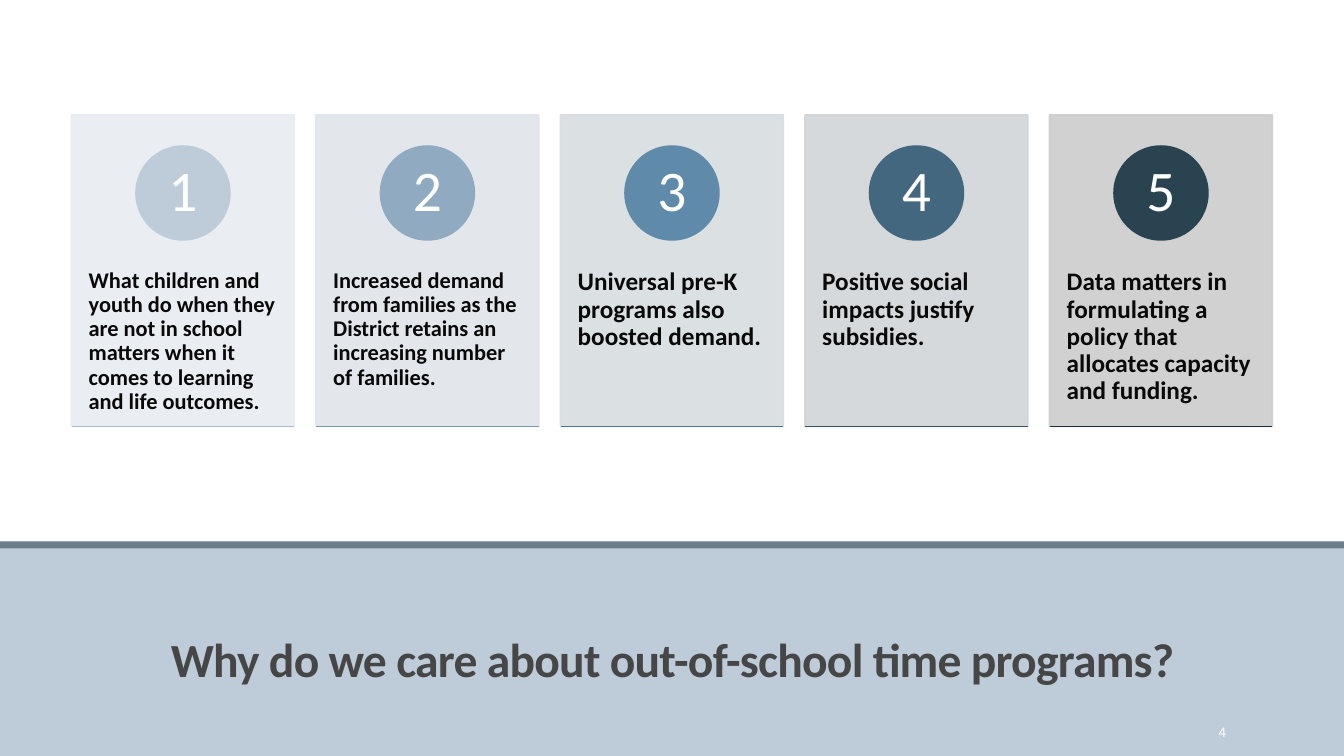
from lxml import etree
from pptx import Presentation, util as u
from pptx.dml.color import RGBColor
from pptx.enum import shapes, text
from pptx.oxml.ns import qn

WHITE = RGBColor(0xFF, 0xFF, 0xFF)
BAND = RGBColor(0xBE, 0xCC, 0xDA)
STRIPE = RGBColor(0x6D, 0x7D, 0x8C)
TITLE_INK = RGBColor(0x46, 0x46, 0x46)
CARD_INK = RGBColor(0x09, 0x09, 0x09)

# Wording, text size, card fill, circle fill, base line
REASONS = [
    ("What children and youth do when they are not in school matters when it "
     "comes to learning and life outcomes.", 16,
     RGBColor(0xE8, 0xEC, 0xF1), BAND, RGBColor(0xA7, 0xBB, 0xCE)),
    ("Increased demand from families as the District retains an increasing "
     "number of families.", 16,
     RGBColor(0xE0, 0xE5, 0xEA), RGBColor(0x8F, 0xAA, 0xC1), RGBColor(0x78, 0x9A, 0xB5)),
    ("Universal pre-K programs also boosted demand.", 18,
     RGBColor(0xD8, 0xDD, 0xE1), RGBColor(0x60, 0x8A, 0xA9), RGBColor(0x50, 0x79, 0x96)),
    ("Positive social impacts justify subsidies.", 18,
     RGBColor(0xD2, 0xD5, 0xD8), RGBColor(0x43, 0x67, 0x7F), RGBColor(0x36, 0x55, 0x69)),
    ("Data matters in formulating a policy that allocates capacity and funding.", 18,
     RGBColor(0xCC, 0xCD, 0xCE), RGBColor(0x29, 0x43, 0x51), RGBColor(0x1D, 0x30, 0x3A)),
]


def inches(box):
    return [u.Inches(length) for length in box]


def write(holder, wording, font, para_format=None, inset=(0.1, 0.05),
          anchor=text.MSO_ANCHOR.TOP):
    """Put one formatted paragraph into a shape and return its run."""
    frame = holder.text_frame
    across, down = inches(inset)
    frame_format = {"word_wrap": True, "auto_size": text.MSO_AUTO_SIZE.NONE,
                    "vertical_anchor": anchor, "margin_left": across,
                    "margin_right": across, "margin_top": down, "margin_bottom": down}
    para = frame.paragraphs[0]
    span = para.add_run()
    span.text = wording
    for target, values in ((frame, frame_format), (para, para_format or {}),
                           (span.font, {"name": "Calibri", **font})):
        for name, value in values.items():
            if name == "color":
                target.color.rgb = value
            else:
                setattr(target, name, value)
    return span


def add_block(page, box, fill, kind=shapes.MSO_SHAPE.RECTANGLE, outlined=False, alpha=None):
    block = page.shapes.add_shape(kind, *inches(box))
    block.shadow.inherit = False
    block.fill.solid()
    block.fill.fore_color.rgb = fill
    if outlined:
        block.line.color.rgb = fill
        block.line.width = u.Pt(1.25)
    else:
        block.line.fill.background()
    if alpha:
        for color in block._element.spPr.iter(qn("a:srgbClr")):
            etree.SubElement(color, qn("a:alpha")).set("val", str(alpha * 1000))
    return block


def add_card(page, box, number, reason):
    left, top, width, height = box
    wording, size, card_fill, circle_fill, line_color = reason
    add_block(page, box, card_fill, outlined=True, alpha=90)

    # Reason
    body = page.shapes.add_textbox(*inches((left, top + 1.17, width, 1.85)))
    write(body, wording, {"size": u.Pt(size), "bold": True, "color": CARD_INK},
          {"line_spacing": 0.9}, (0.17, 0.36))

    # Numbered circle
    diameter = 0.93
    circle = add_block(page, (left + (width - diameter) / 2, top + 0.31, diameter, diameter),
                       circle_fill, shapes.MSO_SHAPE.OVAL, outlined=True)
    write(circle, str(number), {"size": u.Pt(41), "color": WHITE},
          {"line_spacing": 0.9, "alignment": text.PP_ALIGN.CENTER},
          (0, 0), text.MSO_ANCHOR.MIDDLE)

    # Base line
    bottom = top + height
    base = page.shapes.add_connector(shapes.MSO_CONNECTOR.STRAIGHT,
                                     *inches((left, bottom, left + width, bottom)))
    base.line.color.rgb = line_color
    base.line.width = u.Pt(1.25)
    etree.SubElement(base._element.spPr, qn("a:effectLst"))


def add_cards(page, box):
    left, top, width, height = box
    card_width = 2.21
    step = (width - card_width) / (len(REASONS) - 1)
    for index, reason in enumerate(REASONS):
        add_card(page, (left + index * step, top, card_width, height), index + 1, reason)


def add_title_band(page, box):
    left, top, width, height = box
    add_block(page, box, BAND)
    add_block(page, (left, top - 0.05, width, 0.07), STRIPE)

    # Title, brought in front of the band
    title = page.shapes.title
    title.left, title.top, title.width, title.height = inches(
        (left + 1.17, top + 0.32, 11, 1.13))
    span = write(title, "Why do we care about out-of-school time programs?",
                 {"size": u.Pt(34), "bold": True, "color": TITLE_INK},
                 {"line_spacing": 0.85, "alignment": text.PP_ALIGN.CENTER},
                 anchor=text.MSO_ANCHOR.BOTTOM)
    span.font._element.set("spc", "-50")
    page.shapes._spTree.append(title._element)

    # Page number
    number = page.shapes.add_textbox(*inches((left + 10.83, top + 1.64, 1.43, 0.4)))
    write(number, "4", {"size": u.Pt(10.5), "color": WHITE},
          {"alignment": text.PP_ALIGN.RIGHT}, anchor=text.MSO_ANCHOR.MIDDLE)


def main():
    deck = Presentation()
    deck.slide_width, deck.slide_height = inches((13.33, 7.5))
    page = deck.slides.add_slide(deck.slide_layouts[5])
    add_title_band(page, (0, 5.42, 13.33, 2.08))
    add_cards(page, (0.71, 1.14, 11.91, 3.09))
    deck.save("out.pptx")


if __name__ == "__main__":
    main()
